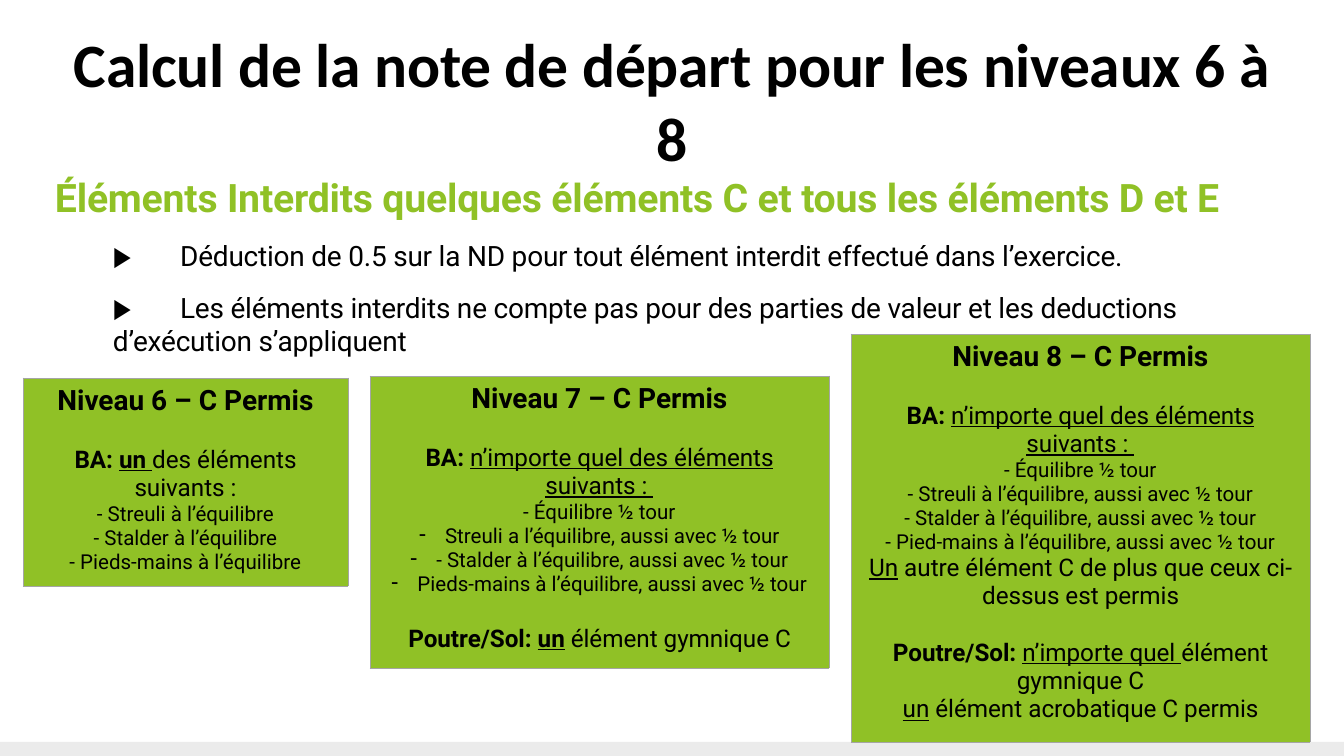
from lxml.etree import SubElement
from pptx import Presentation
from pptx.dml.color import RGBColor
from pptx.enum.shapes import MSO_SHAPE as Shape
from pptx.enum.text import MSO_ANCHOR as Anchor, MSO_AUTO_SIZE as AutoSize, PP_ALIGN as Align
from pptx.oxml.ns import qn
from pptx.util import Pt

SCALE = 914400 / 134.4
GREEN, BLACK, GREY, PALE = "90C126", "000000", "A5A5A5", "EBEBEB"
GAP = 15.2

STREULI = "Streuli à l’équilibre"
STALDER = "Stalder à l’équilibre"
HALF_TURN = ", aussi avec ½ tour"
ANY_OF = [("BA: ", "b"), ("n’importe quel des éléments suivants : ", "u")]

LEVEL_6 = [
    dict(spans=[("Niveau 6 – C Permis", "b")], size=15),
    dict(spans=[("BA: ", "b"), ("un ", "bu"), ("des éléments suivants :", "")], before=GAP),
    dict(spans=[("- " + STREULI, "")], size=11),
    dict(spans=[("- " + STALDER, "")], size=11),
    dict(spans=[("- Pieds-mains à l’équilibre", "")], size=11),
]
LEVEL_7 = [
    dict(spans=[("Niveau 7 – C Permis", "b")], size=15),
    dict(spans=ANY_OF, before=GAP),
    dict(spans=[("- Équilibre ½ tour", "")], size=11),
    dict(spans=[("Streuli a l’équilibre" + HALF_TURN, "")], size=11, bullet="-"),
    dict(spans=[("- " + STALDER + HALF_TURN, "")], size=11, bullet="-"),
    dict(spans=[("Pieds-mains à l’équilibre" + HALF_TURN, "")], size=11, bullet="-"),
    dict(spans=[("Poutre/Sol: ", "b"), ("un", "bu"), (" élément gymnique C", "")], before=GAP),
]
LEVEL_8 = [
    dict(spans=[("Niveau 8 – C Permis", "b")], size=15),
    dict(spans=ANY_OF, before=GAP),
    dict(spans=[("- Équilibre ½ tour", "")], size=11),
    dict(spans=[("- " + STREULI + HALF_TURN, "")], size=11),
    dict(spans=[("- " + STALDER + HALF_TURN, "")], size=11),
    dict(spans=[("- Pied-mains à l’équilibre" + HALF_TURN, "")], size=11),
    dict(spans=[("Un", "u"), (" autre élément C de plus que ceux ci-dessus est permis", "")]),
    dict(spans=[("Poutre/Sol: ", "b"), ("n’importe quel ", "u"), ("élément gymnique C", "")],
         before=GAP),
    dict(spans=[("un", "u"), (" élément acrobatique C permis", "")]),
]
LEVELS = [
    ((23, 378, 325, 208), LEVEL_6),
    ((370, 376, 459, 292), LEVEL_7),
    ((851, 334, 459, 408), LEVEL_8),
]
RULES = [
    "Déduction de 0.5 sur la ND pour tout élément interdit effectué dans l’exercice.",
    "Les éléments interdits ne compte pas pour des parties de valeur et les deductions "
    "\td’exécution s’appliquent",
]


def px(*lengths):
    """Turn px lengths into a list of EMU."""
    return [round(length * SCALE) for length in lengths]


def color(value):
    """Turn a hex string into a colour."""
    return RGBColor.from_string(value)


def add_para(frame, spans, size=13, font="Roboto", fill=BLACK, align=Align.CENTER,
             before=0, indent=0, hang=0, tab=0, bullet="", spacing=0):
    """Write one paragraph of (text, style letters) spans into a text frame."""
    first = frame.paragraphs[0]
    para = first if not first.runs else frame.add_paragraph()
    para.alignment = align
    para.space_before = Pt(before)
    props = para._p.get_or_add_pPr()
    if bullet:
        indent = hang = 26
        SubElement(props, qn("a:buChar"), char=bullet)
    props.set("marL", str(px(indent)[0]))
    props.set("indent", str(px(-hang)[0]))
    if tab:
        tabs = SubElement(props, qn("a:tabLst"))
        SubElement(tabs, qn("a:tab"), pos=str(px(tab)[0]), algn="l")
    for text, style in spans:
        span = para.add_run()
        span.text = text
        span.font.name = font
        span.font.size = Pt(size)
        span.font.bold = "b" in style
        span.font.underline = "u" in style
        span.font.color.rgb = color(fill)
        if spacing:
            span._r.get_or_add_rPr().set("spc", str(spacing))


def prepare_frame(box, anchor):
    """Give a text box wrapping, no margins and the chosen anchor."""
    frame = box.text_frame
    frame.word_wrap = True
    frame.auto_size = AutoSize.SHAPE_TO_FIT_TEXT
    frame.vertical_anchor = anchor
    frame.margin_left = frame.margin_top = frame.margin_right = frame.margin_bottom = 0
    return frame


def add_footer(page):
    """Draw the pale strip along the bottom edge."""
    strip = page.shapes.add_shape(Shape.RECTANGLE, *px(0, 742, 1344, 14))
    strip.shadow.inherit = False
    strip.fill.solid()
    strip.fill.fore_color.rgb = color(PALE)
    strip.line.fill.background()


def fill_title(page, text):
    """Place and write the slide title."""
    title = page.shapes.title
    title.left, title.top, title.width, title.height = px(54, 70, 1236, 60)
    add_para(prepare_frame(title, Anchor.MIDDLE), [(text, "b")], size=33,
             font="Calibri", spacing=-10)


def add_rules(page):
    """Write the green heading and the arrowed rules below it."""
    frame = prepare_frame(page.shapes.add_textbox(*px(54, 173, 1257, 187)), Anchor.TOP)
    heading = "Éléments Interdits quelques éléments C et tous les éléments D et E"
    add_para(frame, [(heading, "b")], size=21, fill=GREEN, align=Align.LEFT,
             indent=1, spacing=-10)
    for rule in RULES:
        add_para(frame, [("▶\t" + rule, "")], size=15, align=Align.LEFT, before=9.8,
                 indent=59, tab=102, spacing=-10)


def add_border(cell):
    """Draw a thin grey line on each side of a cell."""
    props = cell._tc.get_or_add_tcPr()
    for side in ("lnL", "lnR", "lnT", "lnB"):
        line = SubElement(props, qn("a:" + side), w=str(Pt(0.5)))
        solid = SubElement(line, qn("a:solidFill"))
        SubElement(solid, qn("a:srgbClr"), val=GREY)


def add_level(page, place, paras):
    """Add the one-cell green table of a level."""
    table = page.shapes.add_table(1, 1, *px(*place)).table
    table.first_row = table.horz_banding = False
    cell = table.cell(0, 0)
    add_border(cell)
    cell.fill.solid()
    cell.fill.fore_color.rgb = color(GREEN)
    for para in paras:
        add_para(cell.text_frame, **para)


def main():
    """Build the slide and save the deck."""
    deck = Presentation()
    deck.slide_width, deck.slide_height = px(1344, 756)
    page = deck.slides.add_slide(deck.slide_layouts[5])
    add_footer(page)
    fill_title(page, "Calcul de la note de départ pour les niveaux 6 à 8")
    add_rules(page)
    for place, paras in LEVELS:
        add_level(page, place, paras)
    deck.save("out.pptx")


if __name__ == "__main__":
    main()
